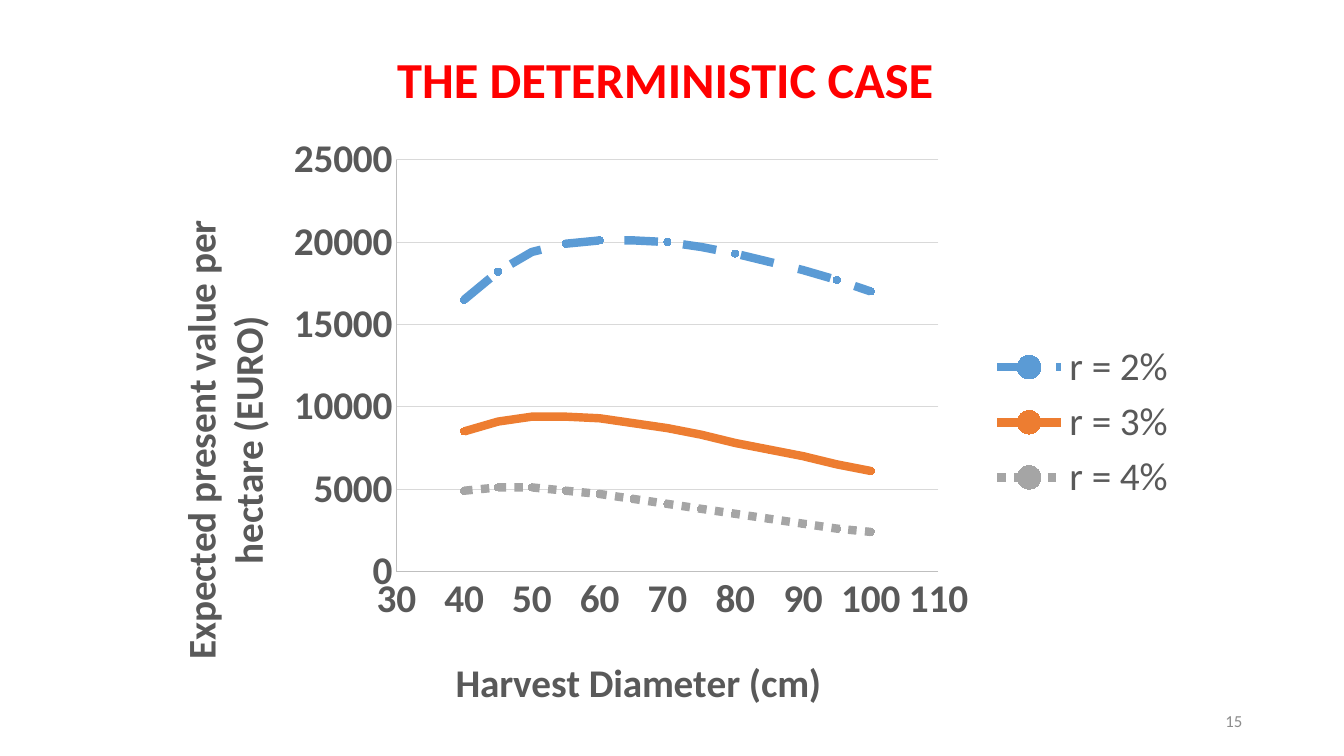
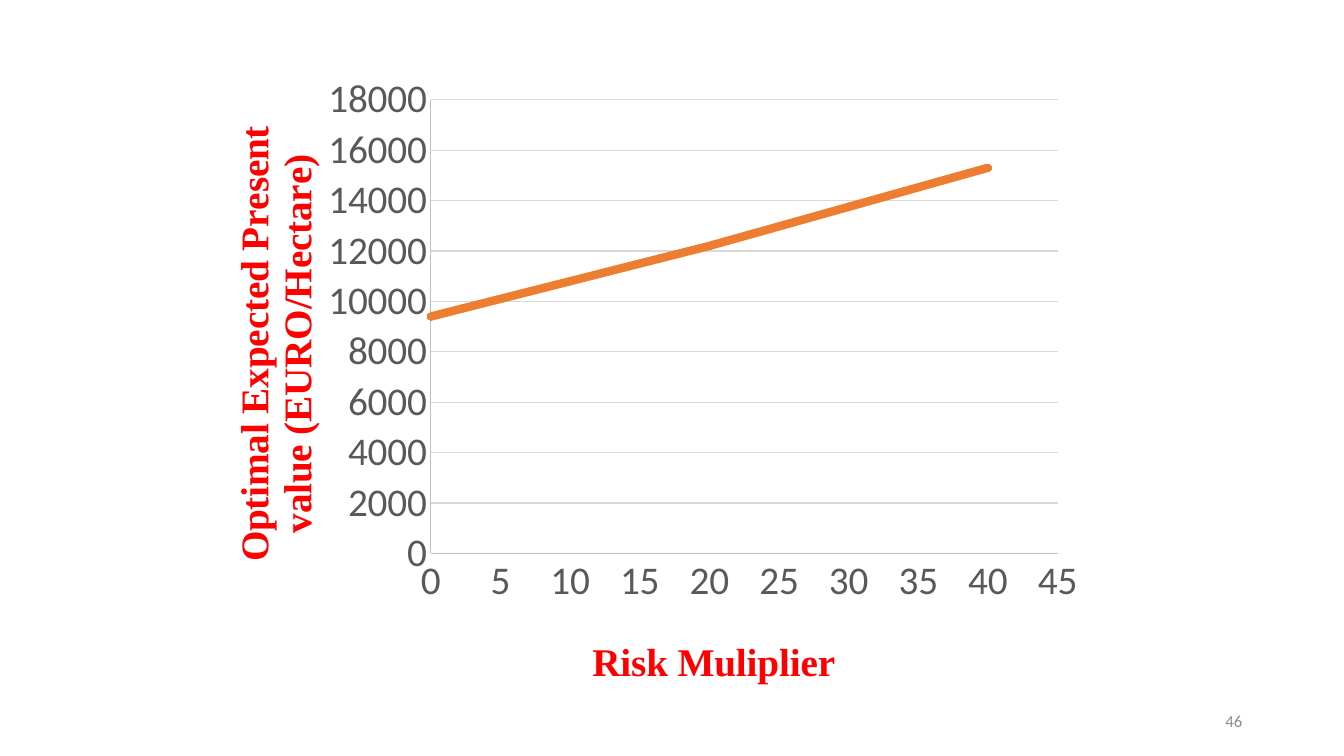
from pptx import Presentation
from pptx.chart.data import XyChartData
from pptx.dml.color import RGBColor
from pptx.enum.chart import (XL_CHART_TYPE, XL_LEGEND_POSITION as LEGEND,
                             XL_MARKER_STYLE as MARKER, XL_TICK_MARK as TICK)
from pptx.enum.dml import MSO_LINE_DASH_STYLE as DASH
from pptx.enum.text import MSO_ANCHOR as ANCHOR, MSO_AUTO_SIZE as AUTO, PP_ALIGN as ALIGN
from pptx.oxml import parse_xml
from pptx.oxml.ns import nsdecls, qn
from pptx.util import Inches, Pt

COLORS = {"red": "FF0000", "text": "595959", "number": "8C8C8C", "axis": "BFBFBF",
          "grid": "D9D9D9", "blue": "5B9BD5", "orange": "ED7D31", "gray": "A5A5A5"}
SANS, SERIF = "Calibri", "Times New Roman"


def rgb(name):
    return RGBColor.from_string(COLORS[name])


def set_font(font, size, color, bold=False, name=SANS):
    font.name, font.size, font.bold = name, Pt(size), bold
    font.color.rgb = rgb(color)


def set_layout(parent, x, y, w=None, h=None):
    """Place a chart part by fractions of the chart's size."""
    for old in parent.findall(qn("c:layout")):
        parent.remove(old)
    parts = [("xMode", "edge"), ("yMode", "edge"), ("x", x), ("y", y)]
    if w is not None:
        parts = [("layoutTarget", "inner")] + parts + [("w", w), ("h", h)]
    body = "".join(f'<c:{tag} val="{val}"/>' for tag, val in parts)
    layout = parse_xml(f'<c:layout {nsdecls("c")}><c:manualLayout>{body}'
                       '</c:manualLayout></c:layout>')
    tx = parent.find(qn("c:tx"))
    if tx is None:
        parent.insert(0, layout)
    else:
        tx.addnext(layout)


class Deck:
    def __init__(self):
        self.prs = Presentation()
        self.prs.slide_width, self.prs.slide_height = Inches(13.33), Inches(7.5)
        self.s = None

    def new_slide(self, number):
        self.s = self.prs.slides.add_slide(self.prs.slide_layouts[6])
        tf = self.text(str(number), (9.42, 6.95, 3, 0.4), 12, "number", align=ALIGN.RIGHT)
        tf.vertical_anchor = ANCHOR.MIDDLE

    def text(self, text, box, size, color, bold=False, align=ALIGN.LEFT):
        tf = self.s.shapes.add_textbox(*map(Inches, box)).text_frame
        tf.word_wrap = True
        p = tf.paragraphs[0]
        p.text, p.alignment = text, align
        set_font(p.font, size, color, bold)
        return tf

    def title(self, text, box):
        self.text(text, box, 36, "red", bold=True).auto_size = AUTO.SHAPE_TO_FIT_TEXT

    def chart(self, box, xs, series, plot_layout):
        """Add a scatter chart; series holds (name, values, color, dash)."""
        data = XyChartData()
        for name, values, _, _ in series:
            points = data.add_series(name)
            for x, y in zip(xs, values):
                points.add_data_point(x, y)
        chart = self.s.shapes.add_chart(XL_CHART_TYPE.XY_SCATTER_LINES,
                                        *map(Inches, box), data).chart
        chart.has_title = chart.has_legend = False
        chart.font.name, chart.font.size = SANS, Pt(10)
        plot = chart.plots[0]
        plot.vary_by_categories = False
        for ser, (_, _, color, dash) in zip(plot.series, series):
            ser.smooth = False
            line, marker = ser.format.line, ser.marker
            line.width, line.color.rgb = Pt(6), rgb(color)
            if dash:
                line.dash_style = dash
            marker.style, marker.size = MARKER.CIRCLE, 5
            marker.format.fill.solid()
            marker.format.fill.fore_color.rgb = rgb(color)
            marker.format.line.color.rgb = rgb(color)
        set_layout(chart.element.find(".//" + qn("c:plotArea")), *plot_layout)
        return chart

    def axis(self, axis, title, title_at, scale, title_style, bold=False, vertical=False):
        axis.minimum_scale, axis.maximum_scale, axis.major_unit = scale
        axis.major_tick_mark = axis.minor_tick_mark = TICK.NONE
        axis.format.line.color.rgb, axis.format.line.width = rgb("axis"), Pt(0.75)
        set_font(axis.tick_labels.font, 28, "text", bold)
        axis.tick_labels.number_format = "General"
        axis.tick_labels.number_format_is_linked = False
        axis.has_major_gridlines = vertical
        if vertical:
            grid = axis.major_gridlines.format.line
            grid.color.rgb, grid.width = rgb("grid"), Pt(0.75)
        p = axis.axis_title.text_frame.paragraphs[0]
        p.text = title
        color, name = title_style
        set_font(p.font, 28, color, True, name)
        element = axis.axis_title.element
        set_layout(element, *title_at)
        if vertical:
            body = element.find(".//" + qn("a:bodyPr"))
            body.set("rot", "-5400000")
            body.set("vert", "horz")

    def legend(self, chart):
        chart.has_legend = True
        chart.legend.position = LEGEND.RIGHT
        chart.legend.include_in_layout = False
        set_font(chart.legend.font, 28, "text")


def main():
    deck = Deck()

    # Present value by harvest diameter
    deck.new_slide(15)
    series = [
        ("r = 2%", [16500, 18200, 19400, 19900, 20100, 20100, 20000,
                    19700, 19300, 18800, 18300, 17700, 17000], "blue", DASH.DASH),
        ("r = 3%", [8500, 9100, 9400, 9400, 9300, 9000, 8700,
                    8300, 7800, 7400, 7000, 6500, 6100], "orange", None),
        ("r = 4%", [4900, 5100, 5100, 4900, 4700, 4400, 4100,
                    3800, 3500, 3200, 2900, 2600, 2400], "gray", DASH.ROUND_DOT),
    ]
    chart = deck.chart((1.45, 1.23, 10.34, 5.92), range(40, 101, 5), series,
                       (0.24, 0.06, 0.52, 0.69))
    style = ("text", SANS)
    deck.axis(chart.category_axis, "Harvest Diameter (cm)", (0.29, 0.88),
              (30, 110, 10), style, bold=True)
    deck.axis(chart.value_axis, "Expected present value per hectare (EURO)", (0.02, 0.15),
              (0, 25000, 5000), style, bold=True, vertical=True)
    deck.legend(chart)
    deck.title("THE DETERMINISTIC CASE", (3.84, 0.43, 5.91, 0.71))

    # Optimal value by risk multiplier
    deck.new_slide(46)
    chart = deck.chart((1.84, 0.61, 9.01, 6.34), (0, 20, 40),
                       [("Series 1", [9400, 12200, 15300], "orange", None)],
                       (0.27, 0.06, 0.69, 0.71))
    style = ("red", SERIF)
    deck.axis(chart.category_axis, "Risk Muliplier", (0.44, 0.89), (0, 45, 5), style)
    deck.axis(chart.value_axis, "Optimal Expected Present value (EURO/Hectare)",
              (0.04, 0.09), (0, 18000, 2000), style, vertical=True)

    deck.prs.save("out.pptx")


if __name__ == "__main__":
    main()
